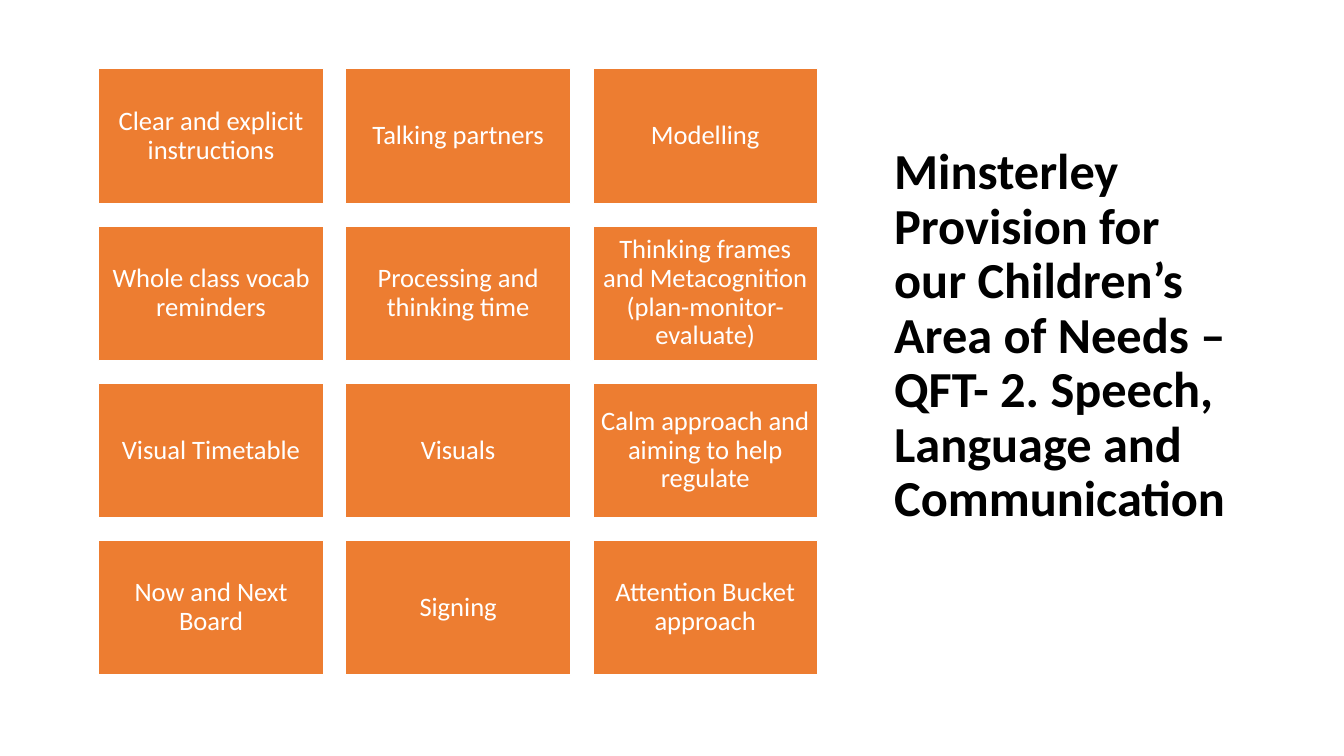
from pptx import Presentation
from pptx import util as u
from pptx.dml.color import RGBColor
from pptx.enum import shapes, text

ORANGE = RGBColor(0xED, 0x7D, 0x31)
WHITE = RGBColor(0xFF, 0xFF, 0xFF)
BLACK = RGBColor(0, 0, 0)


def write(box, words, size, color, align, bold=False, inset=(7.2, 3.6, 7.2, 3.6)):
    frame = box.text_frame
    frame.word_wrap = True
    frame.auto_size = text.MSO_AUTO_SIZE.NONE
    frame.vertical_anchor = text.MSO_ANCHOR.MIDDLE
    frame.margin_left, frame.margin_top, frame.margin_right, frame.margin_bottom = map(u.Pt, inset)
    para = frame.paragraphs[0]
    para.alignment = align
    para.line_spacing = 0.9
    run = para.add_run()
    run.text = words
    run.font.name = "Calibri"
    run.font.size = u.Pt(size)
    run.font.bold = bold
    run.font.color.rgb = color


deck = Presentation()
deck.slide_width = u.Pt(960)
deck.slide_height = u.Pt(540)
slide = deck.slides.add_slide(deck.slide_layouts[5])

title = slide.shapes.title
title.left, title.top, title.width, title.height = map(u.Pt, (631.5, 43.2, 262.8, 439.2))
write(
    title,
    "Minsterley Provision for our Children’s Area of Needs – QFT- 2. Speech, Language and Communication",
    size=36, color=BLACK, align=text.PP_ALIGN.LEFT, bold=True, inset=(7.2, 3.6, 7.2, 48),
)

cards = [
    ["Clear and explicit instructions", "Talking partners", "Modelling"],
    ["Whole class vocab reminders", "Processing and thinking time",
     "Thinking frames and Metacognition (plan-monitor-evaluate)"],
    ["Visual Timetable", "Visuals", "Calm approach and aiming to help regulate"],
    ["Now and Next Board", "Signing", "Attention Bucket approach"],
]
left, top = 70.5, 49
wide, high = 160.5, 96.3
gap = 16

for row, line in enumerate(cards):
    for col, words in enumerate(line):
        card = slide.shapes.add_shape(
            shapes.MSO_SHAPE.RECTANGLE,
            u.Pt(left + col * (wide + gap)), u.Pt(top + row * (high + gap)),
            u.Pt(wide), u.Pt(high),
        )
        card.shadow.inherit = False
        card.fill.solid()
        card.fill.fore_color.rgb = ORANGE
        card.line.color.rgb = WHITE
        card.line.width = u.Pt(1)
        write(card, words, size=19, color=WHITE, align=text.PP_ALIGN.CENTER, inset=[5.7] * 4)

deck.save("out.pptx")
